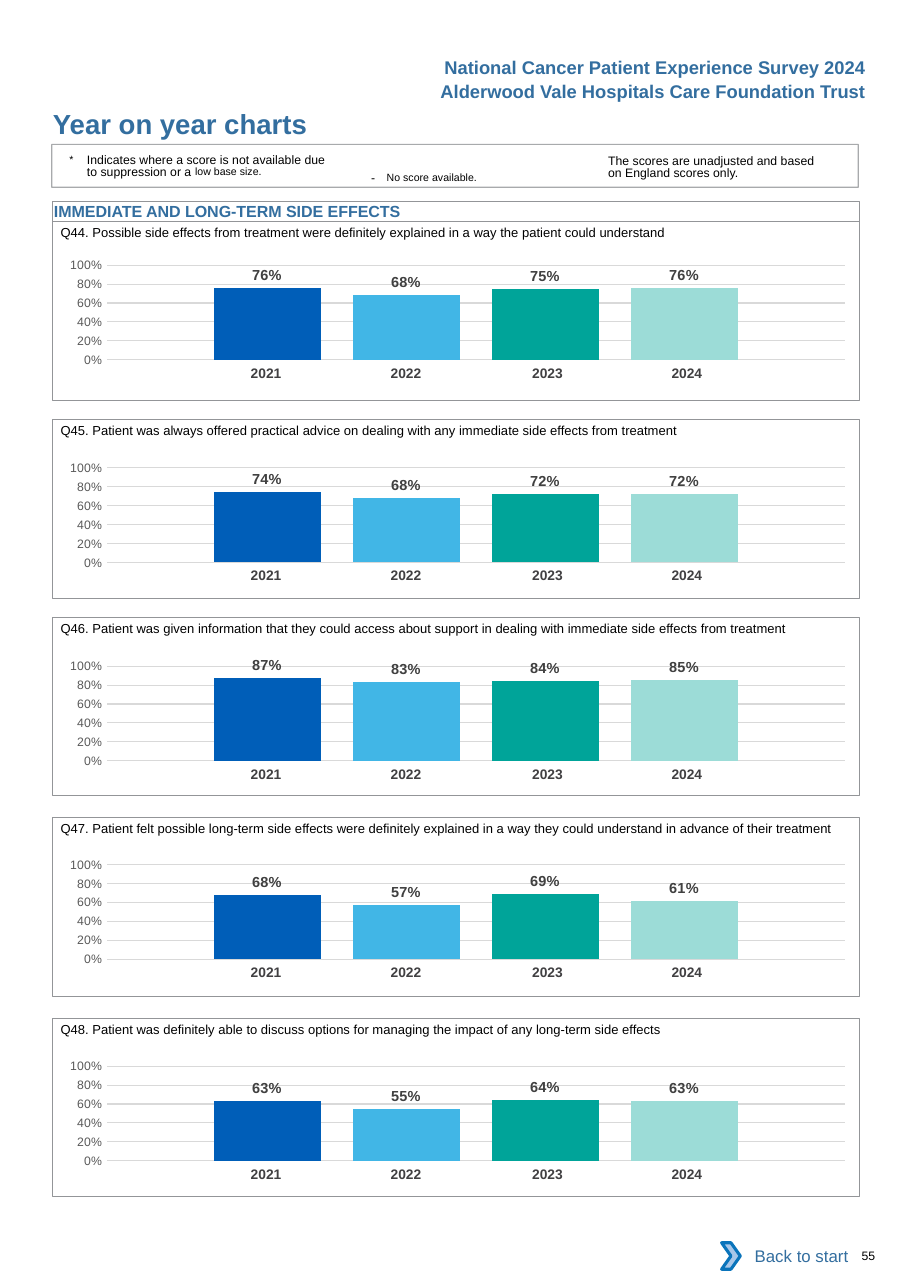
from dataclasses import dataclass

from lxml.etree import SubElement
from pptx import Presentation
from pptx.chart.data import CategoryChartData
from pptx.dml.color import RGBColor
from pptx.enum.chart import XL_CHART_TYPE as ChartType, XL_LABEL_POSITION as LabelPosition, XL_TICK_MARK as TickMark
from pptx.enum.shapes import MSO_SHAPE as Shape
from pptx.enum.text import MSO_ANCHOR as Anchor, PP_ALIGN as Align
from pptx.oxml import parse_xml
from pptx.oxml.ns import nsdecls, qn
from pptx.util import Inches, Pt

# Content
TITLE = "Year on year charts"
HEADERS = [
    ("National Cancer Patient Experience Survey 2024", 0.46),
    ("Alderwood Vale Hospitals Care Foundation Trust", 0.68),
]
SECTION = "IMMEDIATE AND LONG-TERM SIDE EFFECTS"
# Note runs: text, size, baseline shift in percent
SUPPRESSED_NOTE = [
    ("*\t", 12, 3),
    ("Indicates where a score is not available due to suppression or a ", 8, 0),
    ("low base size.", 12, 7),
]
NO_SCORE_NOTE = [("-", 8, 0), ("\tNo score available.", 12, 3)]
UNADJUSTED_NOTE = "The scores are unadjusted and based on England scores only."
BACK_LINK = "Back to start"
PAGE_NUMBER = "55"
YEARS = ["2021", "2022", "2023", "2024"]
# Question, scores by year, panel top, chart top
QUESTIONS = [
    ("Q44. Possible side effects from treatment were definitely explained in a way the patient could understand",
     (0.76, 0.68, 0.75, 0.76), 2.01, 2.22),
    ("Q45. Patient was always offered practical advice on dealing with any immediate side effects from treatment",
     (0.74, 0.68, 0.72, 0.72), 3.81, 4.06),
    ("Q46. Patient was given information that they could access about support in dealing with immediate side "
     "effects from treatment", (0.87, 0.83, 0.84, 0.85), 5.6, 5.86),
    ("Q47. Patient felt possible long-term side effects were definitely explained in a way they could understand "
     "in advance of their treatment", (0.68, 0.57, 0.69, 0.61), 7.42, 7.66),
    ("Q48. Patient was definitely able to discuss options for managing the impact of any long-term side effects",
     (0.63, 0.55, 0.64, 0.63), 9.24, 9.49),
]


@dataclass(frozen=True)
class Theme:
    font: str = "Arial"
    chart_font: str = "Calibri"
    heading: str = "336E9F"
    text: str = "000000"
    year: str = "414042"
    label: str = "404040"
    axis: str = "595959"
    grid: str = "D9D9D9"
    border: str = "939598"
    white: str = "FFFFFF"
    arrow_fill: str = "A8C7E9"
    arrow_line: str = "0A74BB"
    bars: tuple = ("005EB8", "41B6E6", "00A499", "9CDCD7")
    title_size: float = 18
    header_size: float = 12
    section_size: float = 10.5
    link_size: float = 11
    question_size: float = 8.5
    small_size: float = 8
    year_size: float = 9
    label_size: float = 9.5


THEME = Theme()
PANEL_LEFT, PANEL_WIDTH, PANEL_HEIGHT = 0.48, 7.32, 1.62
CHART_LEFT, CHART_HEIGHT, YEARS_OFFSET = 0.39, 1.29, 1.05
YEAR_WIDTHS = [1.27, 1.27, 1.34, 1.27]
YEAR_RIGHT_MARGINS = [0, 0, 0.04, 0.12]
PLOT_AREA = {"x": 0.079, "y": 0.145, "w": 0.915, "h": 0.666}


def style_font(font, size, color, bold=False, name=THEME.font):
    font.name, font.size, font.bold = name, Pt(size), bold
    font.color.rgb = RGBColor.from_string(color)


def write(frame, content, size=THEME.small_size, color=THEME.text, bold=False, align=Align.LEFT,
          anchor=Anchor.MIDDLE, margins=(0, 0, 0, 0), wrap=True, line_spacing=None, before=0, hanging=0):
    """Fill a text frame with a string or a list of (text, size, baseline) runs."""
    frame.word_wrap, frame.vertical_anchor = wrap, anchor
    frame.margin_left, frame.margin_top, frame.margin_right, frame.margin_bottom = map(Inches, margins)
    paragraph = frame.paragraphs[0]
    paragraph.alignment, paragraph.space_before = align, Pt(before)
    if line_spacing:
        paragraph.line_spacing = Pt(line_spacing)
    if hanging:
        properties = paragraph._p.get_or_add_pPr()
        properties.set("marL", str(Inches(hanging)))
        properties.set("indent", str(-Inches(hanging)))
    for text, run_size, baseline in [(content, size, 0)] if isinstance(content, str) else content:
        run = paragraph.add_run()
        run.text = text
        style_font(run.font, run_size, color, bold)
        if baseline:
            run._r.get_or_add_rPr().set("baseline", str(baseline * 1000))


def add_text(slide, content, *box, **formatting):
    write(slide.shapes.add_textbox(*map(Inches, box)).text_frame, content, **formatting)


def add_box(slide, *box, kind=Shape.RECTANGLE, fill=None, line=THEME.border, width=0.5):
    shape = slide.shapes.add_shape(kind, *map(Inches, box))
    shape.shadow.inherit = False
    if fill:
        shape.fill.solid()
        shape.fill.fore_color.rgb = RGBColor.from_string(fill)
    else:
        shape.fill.background()
    if line:
        shape.line.color.rgb = RGBColor.from_string(line)
        shape.line.width = Pt(width)
    else:
        shape.line.fill.background()
    return shape


def add_years(slide, top):
    box = map(Inches, (1.73, top, sum(YEAR_WIDTHS), 0.27))
    table = slide.shapes.add_table(1, len(YEARS), *box).table
    table.first_row = table.horz_banding = False
    # Plain style without borders
    table._tbl.tblPr.find(qn("a:tableStyleId")).text = "{2D5ABB26-0587-4C30-8999-92F81FD0307C}"
    for index, (year, width, right) in enumerate(zip(YEARS, YEAR_WIDTHS, YEAR_RIGHT_MARGINS)):
        table.columns[index].width = Inches(width)
        cell = table.cell(0, index)
        cell.fill.background()
        cell.vertical_anchor = Anchor.TOP
        cell.margin_left, cell.margin_right = Inches(0.1), Inches(right)
        cell.margin_top = cell.margin_bottom = Inches(0.05)
        paragraph = cell.text_frame.paragraphs[0]
        paragraph.alignment = Align.CENTER
        run = paragraph.add_run()
        run.text = year
        style_font(run.font, THEME.year_size, THEME.year, bold=True)


def add_scores(slide, scores, top):
    data = CategoryChartData(number_format="0%")
    data.categories = ["1"]
    for number, score in enumerate(scores, 1):
        data.add_series(f"Series {number}", [score])
    box = map(Inches, (CHART_LEFT, top, PANEL_WIDTH, CHART_HEIGHT))
    chart = slide.shapes.add_chart(ChartType.COLUMN_CLUSTERED, *box, data).chart
    chart.has_legend = chart.has_title = False
    style_font(chart.font, 10, THEME.text, name=THEME.chart_font)
    # Axes
    chart.category_axis.visible = False
    axis = chart.value_axis
    axis.minimum_scale, axis.maximum_scale, axis.major_unit = 0, 1, 0.2
    axis.major_tick_mark = axis.minor_tick_mark = TickMark.NONE
    axis.format.line.fill.background()
    axis.major_gridlines.format.line.color.rgb = RGBColor.from_string(THEME.grid)
    axis.major_gridlines.format.line.width = Pt(0.75)
    axis.tick_labels.number_format, axis.tick_labels.number_format_is_linked = "0%", False
    style_font(axis.tick_labels.font, THEME.small_size, THEME.axis)
    # Columns and their labels
    plot = chart.plots[0]
    plot.gap_width, plot.overlap, plot.vary_by_categories = 200, -30, False
    for series, color in zip(plot.series, THEME.bars):
        series.format.fill.solid()
        series.format.fill.fore_color.rgb = RGBColor.from_string(color)
        labels = series.data_labels
        labels.show_value, labels.position = True, LabelPosition.OUTSIDE_END
        labels.number_format, labels.number_format_is_linked = "0%", False
        style_font(labels.font, THEME.label_size, THEME.label, bold=True)
    # Fixed inner plot area
    area = chart._chartSpace.chart.plotArea
    for old in area.findall(qn("c:layout")):
        area.remove(old)
    modes = '<c:layoutTarget val="inner"/><c:xMode val="edge"/><c:yMode val="edge"/>'
    sizes = "".join(f'<c:{key} val="{value}"/>' for key, value in PLOT_AREA.items())
    area.insert(0, parse_xml(
        f'<c:layout {nsdecls("c")}><c:manualLayout>{modes}{sizes}</c:manualLayout></c:layout>'))


def main():
    presentation = Presentation()
    presentation.slide_width, presentation.slide_height = Inches(8.26), Inches(11.69)
    slide = presentation.slides.add_slide(presentation.slide_layouts[5])

    # Title and headers
    title = slide.shapes.title
    title.left, title.top, title.width, title.height = map(Inches, (0.48, 0.97, 4.5, 0.3))
    write(title.text_frame, TITLE, size=THEME.title_size, color=THEME.heading, bold=True)
    for header, top in HEADERS:
        add_text(slide, header, 3.36, top, 4.5, 0.3, size=THEME.header_size, color=THEME.heading,
                 bold=True, align=Align.RIGHT)

    # Notes
    frame = add_box(slide, 0.47, 1.31, PANEL_WIDTH, 0.39, width=0.75)
    line_color = frame.line._ln.find(".//" + qn("a:srgbClr"))
    SubElement(line_color, qn("a:alpha")).set("val", "80000")
    note = dict(anchor=Anchor.TOP, margins=(0, 0.03, 0, 0), line_spacing=8.1, before=2.5)
    add_text(slide, SUPPRESSED_NOTE, 0.63, 1.38, 2.4, 0.28, hanging=0.16, **note)
    add_text(slide, NO_SCORE_NOTE, 3.37, 1.49, 1.6, 0.19, hanging=0.14)
    add_text(slide, UNADJUSTED_NOTE, 5.52, 1.38, 1.96, 0.27, **note)

    # Section heading
    section = add_box(slide, PANEL_LEFT, 1.83, PANEL_WIDTH, 0.18)
    write(section.text_frame, SECTION, size=THEME.section_size, color=THEME.heading, bold=True,
          margins=(0.01, 0, 0, 0))

    # Question panels
    for question, scores, panel_top, chart_top in QUESTIONS:
        add_years(slide, chart_top + YEARS_OFFSET)
        add_scores(slide, scores, chart_top)
        add_box(slide, PANEL_LEFT, panel_top, PANEL_WIDTH, PANEL_HEIGHT)
        add_text(slide, question, 0.55, panel_top, 7.24, 0.2, size=THEME.question_size)

    # Footer
    link = add_box(slide, 6.62, 11.19, 1.18, 0.42, fill=THEME.white, line=None)
    write(link.text_frame, BACK_LINK, size=THEME.link_size, color=THEME.heading, align=Align.RIGHT,
          margins=(0.1, 0.05, 0.1, 0.05))
    add_box(slide, 6.55, 11.28, 0.17, 0.24, kind=Shape.CHEVRON, fill=THEME.arrow_fill,
            line=THEME.arrow_line, width=2)
    add_text(slide, PAGE_NUMBER, 7.82, 11.33, 0.41, 0.13)
    presentation.save("out.pptx")


if __name__ == "__main__":
    main()
